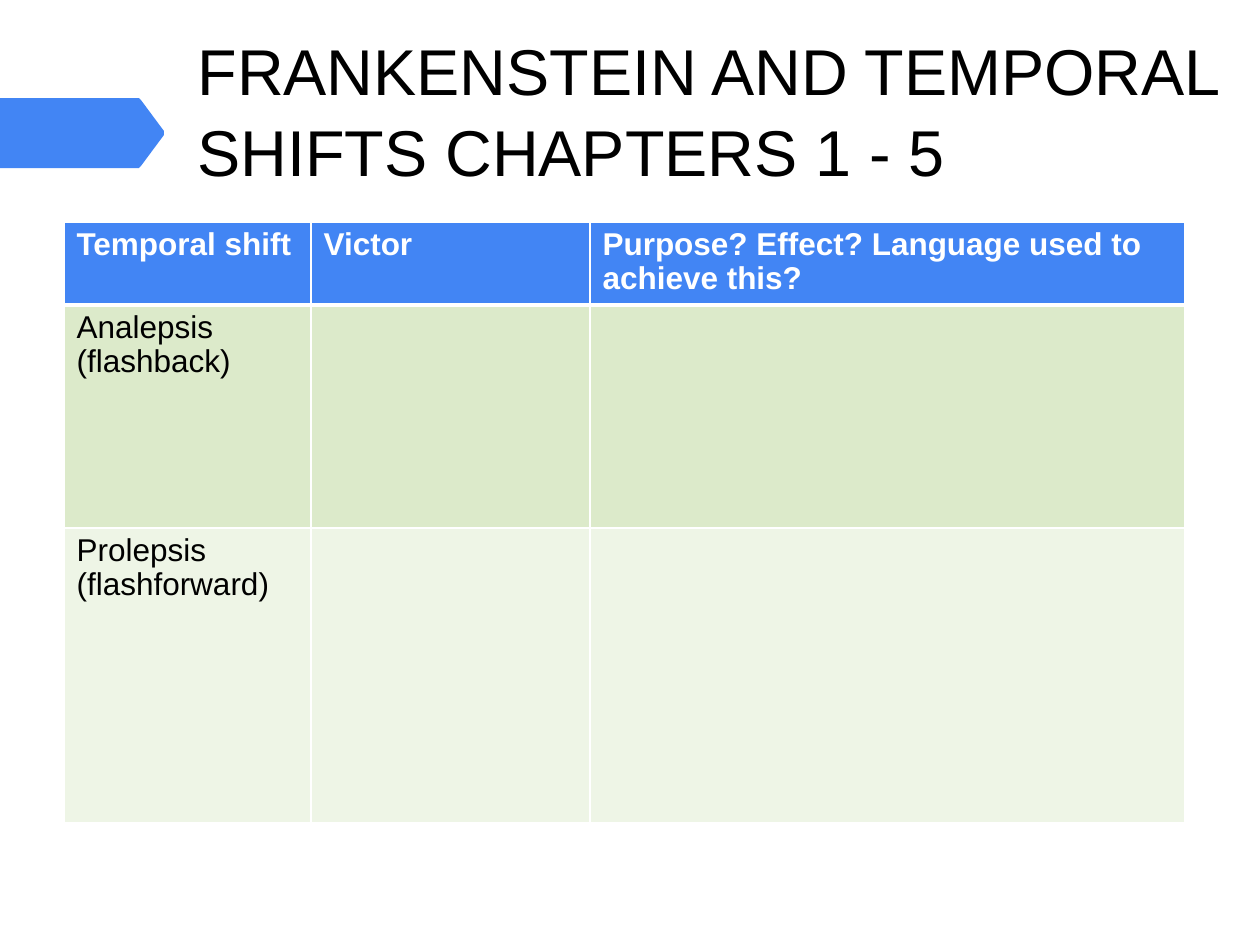
import dataclasses

import pptx
import pptx.dml.color
import pptx.enum.text
import pptx.oxml
import pptx.oxml.ns
import pptx.util

EMU_PER_PX = 914400 / 126


@dataclasses.dataclass(frozen=True)
class Theme:
    font: str = "Arial"
    title_size: int = 37
    table_size: int = 18
    accent: str = "4285F4"
    ink: str = "000000"
    paper: str = "FFFFFF"
    row_fills: tuple = ("4285F4", "DCEACA", "EEF5E6")
    border: int = 1
    header_border: int = 3


THEME = Theme()

ROWS = [
    ["Temporal shift", "Victor", "Purpose? Effect? Language used to achieve this?"],
    ["Analepsis (flashback)", "", ""],
    ["Prolepsis (flashforward)", "", ""],
]
COLUMN_WIDTHS = [247, 279, 595]
ROW_HEIGHTS = [83, 223, 295]


def px(length):
    return pptx.util.Emu(round(length * EMU_PER_PX))


def rgb(color):
    return pptx.dml.color.RGBColor.from_string(color)


def write(frame, text, size, color, bold=False, spacing=1.0):
    """Put one formatted, left-aligned paragraph into a text frame."""
    para = frame.paragraphs[0]
    para.alignment = pptx.enum.text.PP_ALIGN.LEFT
    para.line_spacing = spacing
    span = para.add_run()
    span.text = text
    span.font.name = THEME.font
    span.font.size = pptx.util.Pt(size)
    span.font.bold = bold
    span.font.color.rgb = rgb(color)


def add_pointer(page):
    """Tab with a blunted tip, entering from the left edge."""
    upper = [(0, 98), (139, 98), (141, 100), (164, 131)]
    lower = [(x, 266 - y) for x, y in reversed(upper)]
    builder = page.shapes.build_freeform(*upper[0], scale=EMU_PER_PX)
    builder.add_line_segments(upper[1:] + lower, close=True)
    pointer = builder.convert_to_shape()
    pointer.shadow.inherit = False
    pointer.fill.solid()
    pointer.fill.fore_color.rgb = rgb(THEME.accent)
    pointer.line.fill.background()


def set_title(page, text):
    title = page.shapes.title
    title.left, title.top, title.width, title.height = map(px, (185, 50, 1168, 146))
    frame = title.text_frame
    frame.word_wrap = True
    frame.auto_size = pptx.enum.text.MSO_AUTO_SIZE.NONE
    frame.vertical_anchor = pptx.enum.text.MSO_ANCHOR.BOTTOM
    write(frame, text, THEME.title_size, THEME.ink, spacing=1.05)


def set_borders(cell, widths):
    properties = cell._tc.get_or_add_tcPr()
    for side, width in widths.items():
        properties.append(pptx.oxml.parse_xml(
            f'<a:ln{side} {pptx.oxml.ns.nsdecls("a")} w="{pptx.util.Pt(width)}">'
            f'<a:solidFill><a:srgbClr val="{THEME.paper}"/></a:solidFill></a:ln{side}>'
        ))


def add_grid(page):
    holder = page.shapes.add_table(
        len(ROWS), len(COLUMN_WIDTHS), px(64), px(222),
        px(sum(COLUMN_WIDTHS)), px(sum(ROW_HEIGHTS)))
    table = holder.table
    for column, width in zip(table.columns, COLUMN_WIDTHS):
        column.width = px(width)
    for index, (row, height, texts) in enumerate(zip(table.rows, ROW_HEIGHTS, ROWS)):
        row.height = px(height)
        header = index == 0
        widths = dict.fromkeys("LRTB", THEME.border)
        if header:
            widths["B"] = THEME.header_border
        elif index == 1:
            widths["T"] = THEME.header_border
        for cell, text in zip(row.cells, texts):
            set_borders(cell, widths)
            cell.fill.solid()
            cell.fill.fore_color.rgb = rgb(THEME.row_fills[index])
            if text:
                write(cell.text_frame, text, THEME.table_size,
                      THEME.paper if header else THEME.ink,
                      bold=header, spacing=0.96)


def main():
    deck = pptx.Presentation()
    deck.slide_width, deck.slide_height = px(1260), px(945)
    page = deck.slides.add_slide(deck.slide_layouts.get_by_name("Title Only"))
    page.background.fill.solid()
    page.background.fill.fore_color.rgb = rgb(THEME.paper)

    # Heading
    add_pointer(page)
    set_title(page, "FRANKENSTEIN AND TEMPORAL SHIFTS CHAPTERS 1 - 5")

    # Worksheet
    add_grid(page)
    deck.save("out.pptx")


if __name__ == "__main__":
    main()
